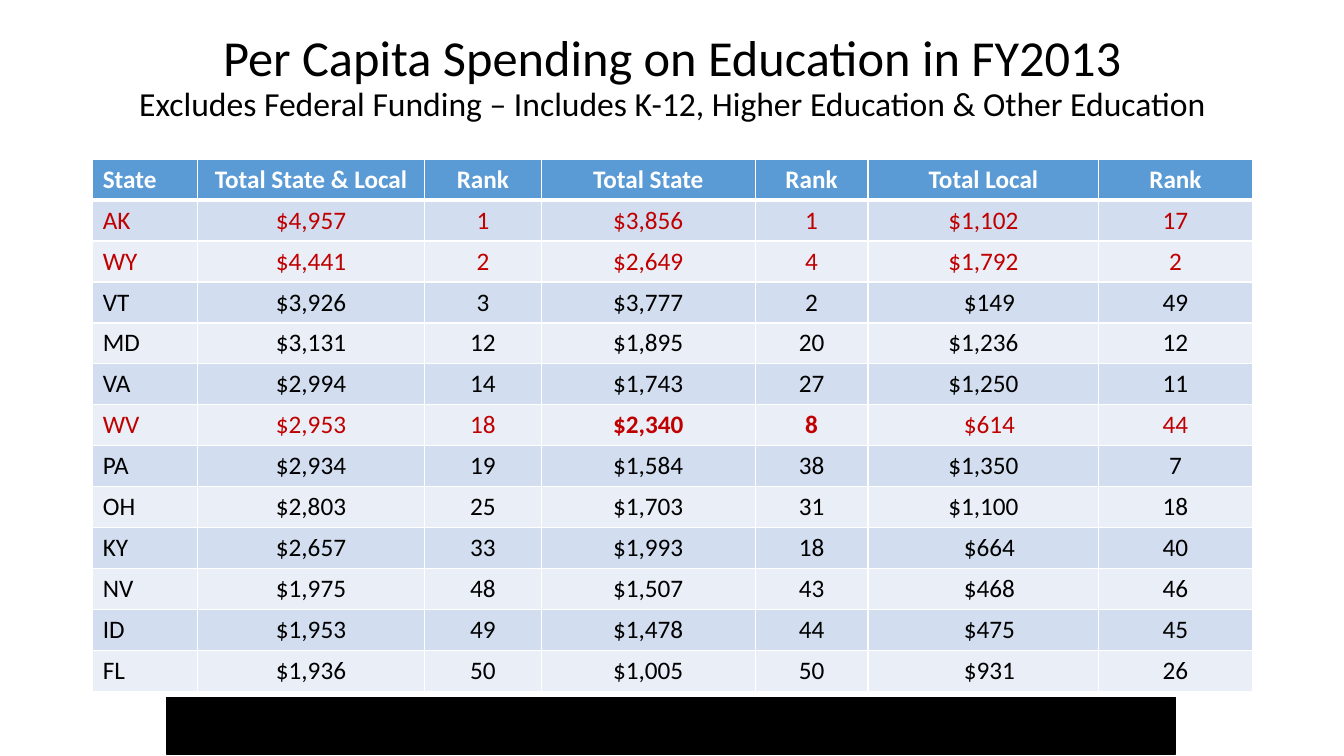
from lxml import etree
from pptx import Presentation
from pptx.dml.color import RGBColor
from pptx.enum.shapes import MSO_SHAPE
from pptx.enum.text import MSO_ANCHOR, PP_ALIGN
from pptx.oxml.ns import qn
from pptx.util import Inches, Pt

RECTANGLE = MSO_SHAPE.RECTANGLE
MIDDLE = MSO_ANCHOR.MIDDLE
CENTER, LEFT = PP_ALIGN.CENTER, PP_ALIGN.LEFT

BLACK = RGBColor(0x00, 0x00, 0x00)
WHITE = RGBColor(0xFF, 0xFF, 0xFF)
RED = RGBColor(0xC0, 0x00, 0x00)
HEADER_BLUE = RGBColor(0x5B, 0x9B, 0xD5)
BAND_DARK = RGBColor(0xD2, 0xDE, 0xEF)
BAND_LIGHT = RGBColor(0xEA, 0xEF, 0xF7)

FONT = "Calibri"
COLUMN_WIDTHS = [1.04, 2.25, 1.16, 2.12, 1.12, 2.29, 1.52]
TABLE_HEIGHT = 5.28
LOCAL_COLUMN = 5
LOCAL_INDENT = 0.95
HIGHLIGHTED_STATES = {"AK", "WY", "WV"}
BOLD_CELLS = {("WV", 3), ("WV", 4)}

SPENDING = [
    ["State", "Total State & Local", "Rank", "Total State", "Rank", "Total Local", "Rank"],
    ["AK", "$4,957", "1", "$3,856", "1", "$1,102", "17"],
    ["WY", "$4,441", "2", "$2,649", "4", "$1,792", "2"],
    ["VT", "$3,926", "3", "$3,777", "2", "$149", "49"],
    ["MD", "$3,131", "12", "$1,895", "20", "$1,236", "12"],
    ["VA", "$2,994", "14", "$1,743", "27", "$1,250", "11"],
    ["WV", "$2,953", "18", "$2,340", "8", "$614", "44"],
    ["PA", "$2,934", "19", "$1,584", "38", "$1,350", "7"],
    ["OH", "$2,803", "25", "$1,703", "31", "$1,100", "18"],
    ["KY", "$2,657", "33", "$1,993", "18", "$664", "40"],
    ["NV", "$1,975", "48", "$1,507", "43", "$468", "46"],
    ["ID", "$1,953", "49", "$1,478", "44", "$475", "45"],
    ["FL", "$1,936", "50", "$1,005", "50", "$931", "26"],
]


def add_run(paragraph, text, size, color, bold=False):
    run = paragraph.add_run()
    run.text = text
    run.font.color.rgb = color
    for name, value in {"name": FONT, "size": Pt(size), "bold": bold}.items():
        setattr(run.font, name, value)


def add_title(slide):
    frame = slide.shapes.add_textbox(
        Inches(0.92), Inches(0.25), Inches(11.5), Inches(1.06)
    ).text_frame
    for name, value in {"word_wrap": True, "vertical_anchor": MIDDLE}.items():
        setattr(frame, name, value)
    paragraph = frame.paragraphs[0]
    for name, value in {"alignment": CENTER, "line_spacing": 0.9}.items():
        setattr(paragraph, name, value)
    add_run(paragraph, "Per Capita Spending on Education in FY2013", 36, BLACK)
    paragraph.add_line_break()
    add_run(
        paragraph,
        "Excludes Federal Funding – Includes K-12, Higher Education & Other Education",
        24,
        BLACK,
    )


def set_borders(cell, top, bottom):
    properties = cell._tc.get_or_add_tcPr()
    widths = {"a:lnL": 1, "a:lnR": 1, "a:lnT": top, "a:lnB": bottom}
    for position, (tag, width) in enumerate(widths.items()):
        border = etree.Element(qn(tag), w=str(Pt(width)))
        fill = etree.SubElement(border, qn("a:solidFill"))
        etree.SubElement(fill, qn("a:srgbClr"), val=str(WHITE))
        properties.insert(position, border)


def fill_cell(cell, text, row, column):
    state = SPENDING[row][0]
    is_header = row == 0
    if is_header:
        background, color = HEADER_BLUE, WHITE
    else:
        background = BAND_DARK if row % 2 else BAND_LIGHT
        color = RED if state in HIGHLIGHTED_STATES else BLACK
    cell.fill.solid()
    cell.fill.fore_color.rgb = background
    set_borders(cell, top=3 if row == 1 else 1, bottom=3 if is_header else 1)

    is_indented = column == LOCAL_COLUMN and not is_header and "," not in text
    if is_indented:
        cell.margin_left = Inches(LOCAL_INDENT)
    paragraph = cell.text_frame.paragraphs[0]
    paragraph.alignment = LEFT if column == 0 or is_indented else CENTER
    add_run(paragraph, text, 18, color, is_header or (state, column) in BOLD_CELLS)


def add_spending_table(slide):
    table = slide.shapes.add_table(
        len(SPENDING), len(COLUMN_WIDTHS), Inches(0.92), Inches(1.58),
        Inches(sum(COLUMN_WIDTHS)), Inches(TABLE_HEIGHT),
    ).table
    for name, value in {"first_row": False, "horz_banding": False}.items():
        setattr(table, name, value)
    for column, width in zip(table.columns, COLUMN_WIDTHS):
        column.width = Inches(width)
    for row, values in enumerate(SPENDING):
        for column, text in enumerate(values):
            fill_cell(table.cell(row, column), text, row, column)


def add_footer_band(slide):
    band = slide.shapes.add_shape(
        RECTANGLE, Inches(1.65), Inches(6.92), Inches(10.01), Inches(0.56)
    )
    band.shadow.inherit = False
    band.fill.solid()
    band.fill.fore_color.rgb = BLACK
    band.line.color.rgb = BLACK
    band.line.width = Pt(1)


def main():
    presentation = Presentation()
    presentation.slide_width = Inches(13.33)
    presentation.slide_height = Inches(7.5)
    slide = presentation.slides.add_slide(presentation.slide_layouts[6])
    add_title(slide)
    add_spending_table(slide)
    add_footer_band(slide)
    presentation.save("out.pptx")


if __name__ == "__main__":
    main()
